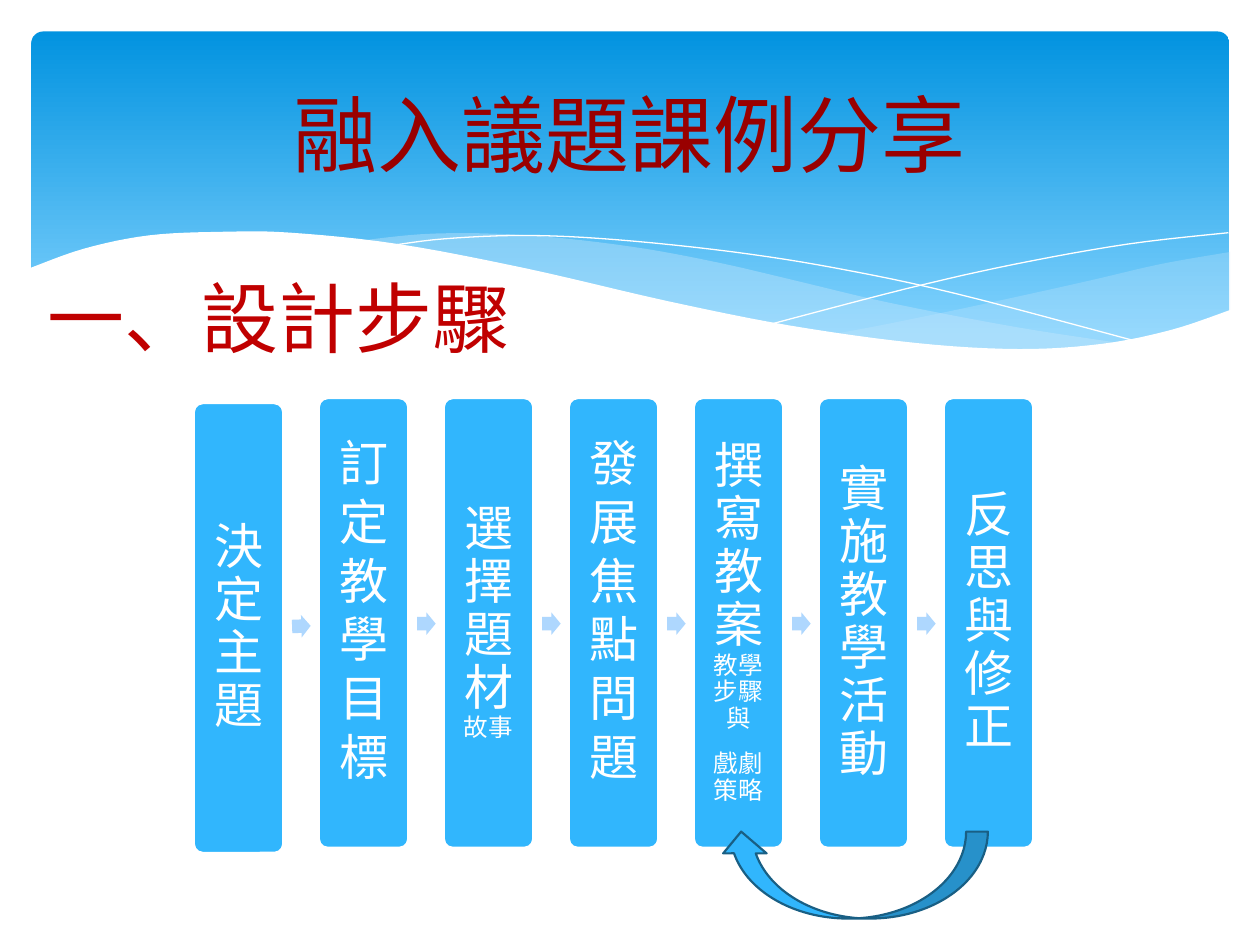
"""Build a slide showing seven lesson design steps under a wave banner."""

from dataclasses import dataclass
from typing import Any, Optional

from lxml.etree import SubElement
from pptx import Presentation
from pptx.dml.color import RGBColor
from pptx.enum.shapes import MSO_SHAPE
from pptx.enum.text import MSO_ANCHOR, PP_ALIGN
from pptx.oxml.ns import qn
from pptx.util import Pt

Points = list[tuple[float, float]]


@dataclass(frozen=True)
class Theme:
    """Colours and type sizes of the slide."""

    font: str = "Calibri"
    banner_top: str = "0293E0"
    banner_bottom: str = "83D3FE"
    wave: str = "C6E7FC"
    white: str = "FFFFFF"
    title: str = "990000"
    heading: str = "C00000"
    step: str = "31B6FD"
    arrow: str = "AED7FE"
    outline: str = "195F84"
    title_size: float = 48
    heading_size: float = 44
    step_size: float = 28
    detail_size: float = 14


@dataclass(frozen=True)
class Box:
    """A rectangle in points."""

    left: float
    top: float
    width: float
    height: float

    def lengths(self) -> list[Pt]:
        """Return the four lengths in the order python-pptx expects."""
        return [Pt(value) for value in (self.left, self.top, self.width, self.height)]


@dataclass(frozen=True)
class Run:
    """A piece of text in one size and colour."""

    text: str
    size: float
    color: str


@dataclass(frozen=True)
class Step:
    """One step with optional details."""

    label: str
    details: tuple[str, ...] = ()
    line_spacing: float = 0.9
    extra_bottom: float = 0
    drop: float = 0
    arrow_rotation: float = 0


@dataclass(frozen=True)
class Wave:
    """A banner curve: smooth edges, optional straight corners, and its paint."""

    edges: tuple[Points, ...]
    corners: tuple[tuple[float, float], ...] = ()
    fill: Optional[str] = None
    opacity: int = 100
    line: Optional[str] = None


THEME = Theme()
INSET = 8.64
STEP_BOX = Box(110.75, 227.5, 51.1, 257)
STEP_PITCH = 71.43
ARROW_BOX = Box(56.2, 350, 10.6, 12.8)

STEPS = [
    Step("決定主題", drop=2.9, arrow_rotation=357.9),
    Step("訂定教學目標", line_spacing=1, extra_bottom=16),
    Step("選擇題材", ("故事",)),
    Step("發展焦點問題", line_spacing=1, extra_bottom=16),
    Step("撰寫教案", ("教學步驟與", "戲劇策略")),
    Step("實施教學活動"),
    Step("反思與修正"),
]

WAVES = [
    Wave(
        ([(703, 144), (663, 151), (620, 161), (561, 174), (508, 185), (476, 191)],
         [(476, 191), (527, 197), (578, 200), (628, 198), (668, 191), (703, 178)]),
        fill=THEME.wave, opacity=29),
    Wave(
        ([(643, 196.5), (581, 187), (508, 173), (453, 160), (410, 150), (361, 141),
          (302, 134.5), (248, 133.5), (206, 137.5)],
         [(206, 137.5), (261, 146), (323, 160), (407.5, 178.5), (468, 190),
          (530, 198), (588, 200), (643, 196.5)]),
        fill=THEME.wave, opacity=40),
    Wave(
        ([(222.5, 140.5), (254, 136.5), (300, 134.6), (352, 137), (419, 144),
          (479, 153.5), (547, 168), (653, 196)],),
        line=THEME.white),
    Wave(
        ([(441.5, 185), (518, 165), (580, 151), (644.5, 139.5), (702, 133)],),
        line=THEME.white),
    Wave(
        ([(703.5, 177), (669.5, 188.5), (630, 196.5), (582.5, 199.5), (523, 196),
          (451, 186), (381, 172), (301, 153.5), (227.5, 139.5), (166, 133),
          (127, 132.5), (85.5, 134.5), (48.5, 142), (16.5, 153.5)],),
        corners=((16.5, 237), (703.5, 237)), fill=THEME.white),
]


def apply_format(target: Any, values: dict[str, Any]) -> None:
    """Set every named attribute on the target."""
    for name, value in values.items():
        setattr(target, name, value)


def paint(shape: Any, fill: Optional[str], line: Optional[str] = None, width: float = 0) -> None:
    """Give a shape its fill and line, without a shadow."""
    shape.shadow.inherit = False
    for target, color in ((shape.fill, fill), (shape.line.fill, line)):
        if color is None:
            target.background()
        else:
            target.solid()
            target.fore_color.rgb = RGBColor.from_string(color)
    if line is not None:
        shape.line.width = Pt(width)


def smooth(points: Points, divisions: int = 6) -> Points:
    """Return a Catmull-Rom curve through the points."""
    padded = [points[0], *points, points[-1]]
    curve = [points[0]]
    for a, b, c, d in zip(padded, padded[1:], padded[2:], padded[3:]):
        for t in (index / divisions for index in range(1, divisions + 1)):
            x, y = (
                (2 * q + (r - p) * t + (2 * p - 5 * q + 4 * r - s) * t**2
                 + (3 * q - p - 3 * r + s) * t**3) / 2
                for p, q, r, s in zip(a, b, c, d)
            )
            curve.append((x, y))
    return curve


def draw_wave(slide: Any, wave: Wave) -> None:
    """Draw one curve of the banner."""
    points = [point for edge in wave.edges for point in smooth(edge)] + list(wave.corners)
    start, *rest = [(Pt(x), Pt(y)) for x, y in points]
    builder = slide.shapes.build_freeform(*start)
    builder.add_line_segments(rest, close=wave.fill is not None)
    shape = builder.convert_to_shape()
    paint(shape, wave.fill, wave.line)
    if wave.opacity < 100:
        color = next(shape.fill._xPr.iter(qn("a:srgbClr")))
        SubElement(color, qn("a:alpha")).set("val", str(wave.opacity * 1000))


def draw_banner(slide: Any) -> None:
    """Draw the gradient panel and its waves."""
    shape = slide.shapes.add_shape(MSO_SHAPE.ROUNDED_RECTANGLE, *Box(18, 18, 684.5, 194.4).lengths())
    shape.adjustments[0] = 0.034
    paint(shape, None)
    shape.fill.gradient()
    shape.fill.gradient_angle = 270
    stops = ((0, THEME.banner_top), (0.9, THEME.banner_bottom))
    for stop, (position, color) in zip(shape.fill.gradient_stops, stops):
        apply_format(stop, {"position": position})
        stop.color.rgb = RGBColor.from_string(color)
    for wave in WAVES:
        draw_wave(slide, wave)


def write(shape: Any, paragraphs: list[list[Run]], frame_format: dict[str, Any],
          paragraph_format: dict[str, Any], gap: float = 0) -> None:
    """Write paragraphs of runs into a shape, with a gap between paragraphs."""
    frame = shape.text_frame
    apply_format(frame, frame_format)
    for index, runs in enumerate(paragraphs):
        paragraph = frame.add_paragraph() if index else frame.paragraphs[0]
        apply_format(paragraph, {**paragraph_format, "space_before": Pt(gap if index else 0)})
        for item in runs:
            run = paragraph.add_run()
            run.text = item.text
            apply_format(run.font, {"name": THEME.font, "size": Pt(item.size)})
            run.font.color.rgb = RGBColor.from_string(item.color)


def draw_step(slide: Any, index: int, step: Step) -> None:
    """Draw a step and the arrow that leads to the next one."""
    left = STEP_BOX.left + index * STEP_PITCH
    box = Box(left, STEP_BOX.top + step.drop, STEP_BOX.width, STEP_BOX.height)
    shape = slide.shapes.add_shape(MSO_SHAPE.ROUNDED_RECTANGLE, *box.lengths())
    shape.adjustments[0] = 0.1
    paint(shape, THEME.step, THEME.white, 1.25)
    details = [[Run(text, THEME.detail_size, THEME.white)] for text in step.details] or [[]]
    label = Run(step.label, THEME.step_size, THEME.white)
    insets = {f"margin_{side}": Pt(INSET) for side in ("left", "top", "right")}
    write(shape, [[label, *details[0]], *details[1:]],
          {"word_wrap": True, "vertical_anchor": MSO_ANCHOR.MIDDLE, **insets,
           "margin_bottom": Pt(INSET + step.extra_bottom)},
          {"alignment": PP_ALIGN.CENTER, "line_spacing": step.line_spacing}, gap=11)
    if index < len(STEPS) - 1:
        arrow_box = Box(left + ARROW_BOX.left, ARROW_BOX.top + step.drop / 2,
                        ARROW_BOX.width, ARROW_BOX.height)
        arrow = slide.shapes.add_shape(MSO_SHAPE.RIGHT_ARROW, *arrow_box.lengths())
        arrow.adjustments[0] = 0.6
        arrow.rotation = step.arrow_rotation
        paint(arrow, THEME.arrow)


def main() -> None:
    """Build and save the presentation."""
    presentation = Presentation()
    apply_format(presentation, {"slide_width": Pt(720), "slide_height": Pt(540)})
    slide = presentation.slides.add_slide(presentation.slide_layouts[6])
    draw_banner(slide)
    title = slide.shapes.add_textbox(*Box(36, 26.6, 648, 98.6).lengths())
    write(title, [[Run("融入議題課例分享", THEME.title_size, THEME.title)]],
          {"word_wrap": True, "vertical_anchor": MSO_ANCHOR.MIDDLE},
          {"alignment": PP_ALIGN.CENTER})
    heading = slide.shapes.add_textbox(*Box(20.2, 151.2, 280.8, 60.5).lengths())
    write(heading, [[Run("一、設計步驟", THEME.heading_size, THEME.heading)]],
          {"word_wrap": False}, {"alignment": PP_ALIGN.LEFT})
    for index, step in enumerate(STEPS):
        draw_step(slide, index, step)
    loop = slide.shapes.add_shape(MSO_SHAPE.CURVED_DOWN_ARROW, *Box(411.1, 475.2, 153.4, 49.7).lengths())
    loop.rotation = 180
    paint(loop, THEME.step, THEME.outline, 1.25)
    presentation.save("out.pptx")


if __name__ == "__main__":
    main()
